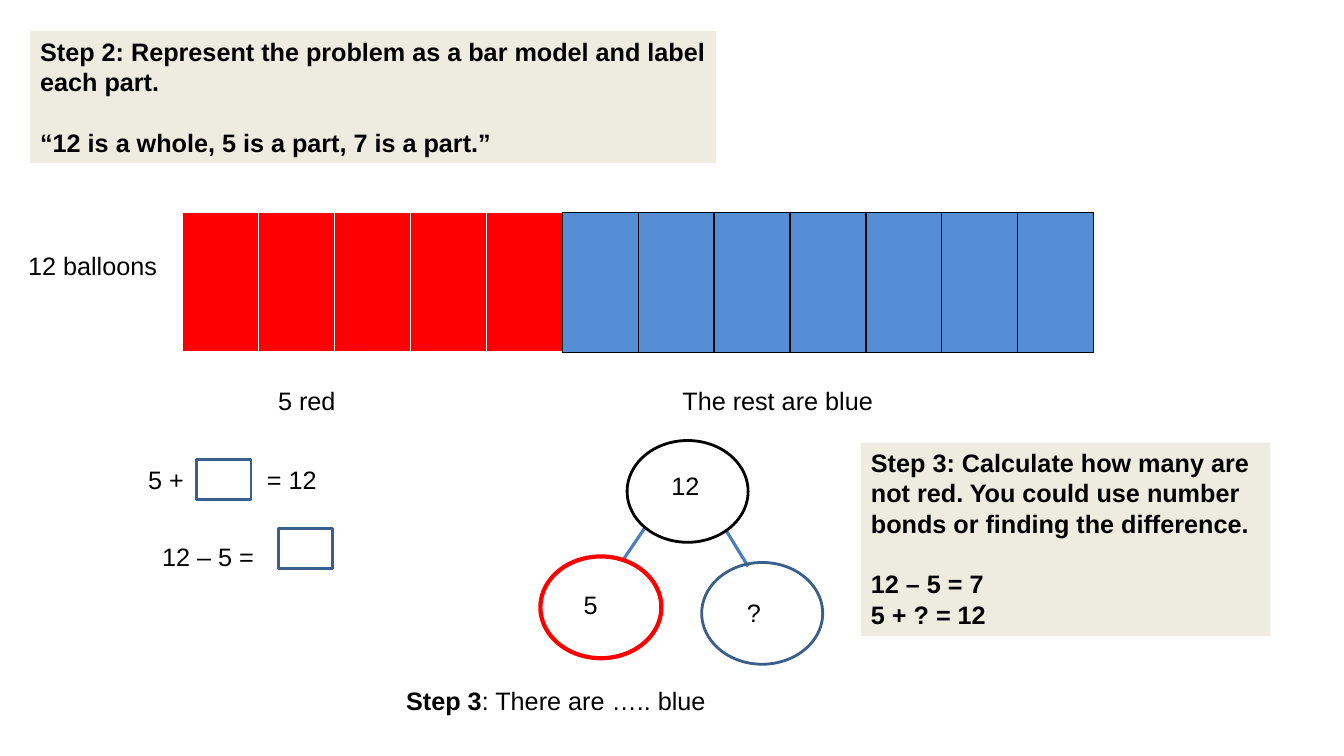
from lxml import etree
from pptx import Presentation
from pptx.dml.color import RGBColor
from pptx.enum.shapes import MSO_CONNECTOR, MSO_SHAPE
from pptx.enum.text import MSO_ANCHOR, PP_ALIGN
from pptx.oxml.ns import qn
from pptx.util import Inches, Pt

LINE = MSO_CONNECTOR.STRAIGHT
RECT, OVAL = MSO_SHAPE.RECTANGLE, MSO_SHAPE.OVAL
LEFT, TOP = PP_ALIGN.LEFT, MSO_ANCHOR.TOP
BLACK = RGBColor(0x00, 0x00, 0x00)
WHITE = RGBColor(0xFF, 0xFF, 0xFF)
RED = RGBColor(0xFF, 0x00, 0x00)
BLUE = RGBColor(0x55, 0x8E, 0xD5)
NAVY = RGBColor(0x3A, 0x5F, 0x8C)
STEEL = RGBColor(0x4B, 0x7E, 0xBC)
CREAM = RGBColor(0xEE, 0xEC, 0xE1)


class Board:
    font = "Arial"
    size = Pt(18)
    gap = Pt(21.7)

    def __init__(self, slide):
        self.slide = slide
        self.shapes = slide.shapes

    def set_text(self, frame, lines, bold=False):
        """Fill a frame; the second line stands one blank line lower."""
        frame.word_wrap = True
        frame.vertical_anchor = TOP
        frame.text = "\n".join(lines)
        for i, para in enumerate(frame.paragraphs):
            para.alignment = LEFT
            if i == 1:
                para.space_before = self.gap
            for run in para.runs:
                self.style(run, bold)

    def style(self, run, bold):
        run.font.name = self.font
        run.font.size = self.size
        run.font.bold = bold
        run.font.color.rgb = BLACK

    def label(self, text, x, y, w, h=0.4):
        box = self.shapes.add_textbox(Inches(x), Inches(y), Inches(w), Inches(h))
        self.set_text(box.text_frame, [text])
        return box.text_frame.paragraphs[0]

    def shape(self, kind, x, y, w, h, fill=None, line=None, width=2):
        item = self.shapes.add_shape(kind, Inches(x), Inches(y), Inches(w), Inches(h))
        item.shadow.inherit = False
        if fill is None:
            item.fill.background()
        else:
            item.fill.solid()
            item.fill.fore_color.rgb = fill
        if line is None:
            item.line.fill.background()
        else:
            item.line.color.rgb = line
            item.line.width = Pt(width)
        return item

    def panel(self, lines, x, y, w, h):
        box = self.shape(RECT, x, y, w, h, CREAM)
        self.set_text(box.text_frame, lines, True)

    def link(self, x1, y1, x2, y2):
        item = self.shapes.add_connector(LINE, Inches(x1), Inches(y1), Inches(x2), Inches(y2))
        item.line.color.rgb = STEEL
        item.line.width = Pt(2.25)
        etree.SubElement(item._element.spPr, qn("a:effectLst"))

    def edge(self, cell, side, color, width):
        """Draw one cell border; call before the cell is filled."""
        line = etree.SubElement(cell._tc.get_or_add_tcPr(), qn("a:ln" + side), w=str(Pt(width)))
        fill = etree.SubElement(line, qn("a:solidFill"))
        etree.SubElement(fill, qn("a:srgbClr"), val=str(color))

    def bar(self, x, y, w, h, reds, total):
        grid = self.shapes.add_table(1, total, Inches(x), Inches(y), Inches(w), Inches(h)).table
        for i, col in enumerate(grid.columns):
            col.width = Inches(w / total)
            cell = grid.cell(0, i)
            is_red = i < reds
            for side in "LRTB":
                seam = side == "R" and i == reds - 1
                color = WHITE if is_red and not seam else BLACK
                self.edge(cell, side, color, 3 if is_red and side == "B" else 1)
            cell.fill.solid()
            cell.fill.fore_color.rgb = RED if is_red else BLUE


def main():
    deck = Presentation()
    deck.slide_width, deck.slide_height = Inches(13.33), Inches(7.5)
    board = Board(deck.slides.add_slide(deck.slide_layouts[6]))

    board.bar(1.81, 2.11, 9.04, 1.39, reds=5, total=12)
    board.label("12 balloons", 0.18, 2.43, 2.18)
    board.label("5 red", 2.66, 3.77, 2.7)
    board.label("The rest are blue", 6.67, 3.77, 3.17)

    board.label("5 +", 1.37, 4.56, 0.6)
    board.label("= 12", 2.55, 4.56, 0.8)
    board.label("12 – 5 =", 1.51, 5.32, 1.86)
    for x, y in ((1.95, 4.56), (2.76, 5.24)):
        board.shape(RECT, x, y, 0.54, 0.4, WHITE, NAVY)

    board.link(6.4, 5.23, 6.17, 5.57)
    board.link(7.2, 5.26, 7.42, 5.62)
    bonds = (
        ("12", 6.22, 4.37, BLACK, 2, 6.56, 4.62),
        ("5", 5.36, 5.52, RED, 3, 5.69, 5.8),
        ("?", 6.96, 5.58, NAVY, 2, 7.31, 5.88),
    )
    for text, x, y, color, width, left, top in bonds:
        board.shape(OVAL, x, y, 1.2, 1.01, None, color, width)
        board.label(text, left, top, 0.54)

    board.panel(["Step 2: Represent the problem as a bar model and label each part.",
                 "“12 is a whole, 5 is a part, 7 is a part.”"], 0.3, 0.31, 6.8, 1.31)
    board.panel(["Step 3: Calculate how many are not red. You could use number "
                 "bonds or finding the difference.", "12 – 5 = 7", "5 + ? = 12"],
                8.54, 4.39, 4.06, 1.92)

    note = board.label("Step 3", 3.93, 6.75, 4.88)
    note.runs[0].font.bold = True
    rest = note.add_run()
    rest.text = ": There are ….. blue"
    board.style(rest, False)

    deck.save("out.pptx")


if __name__ == "__main__":
    main()
